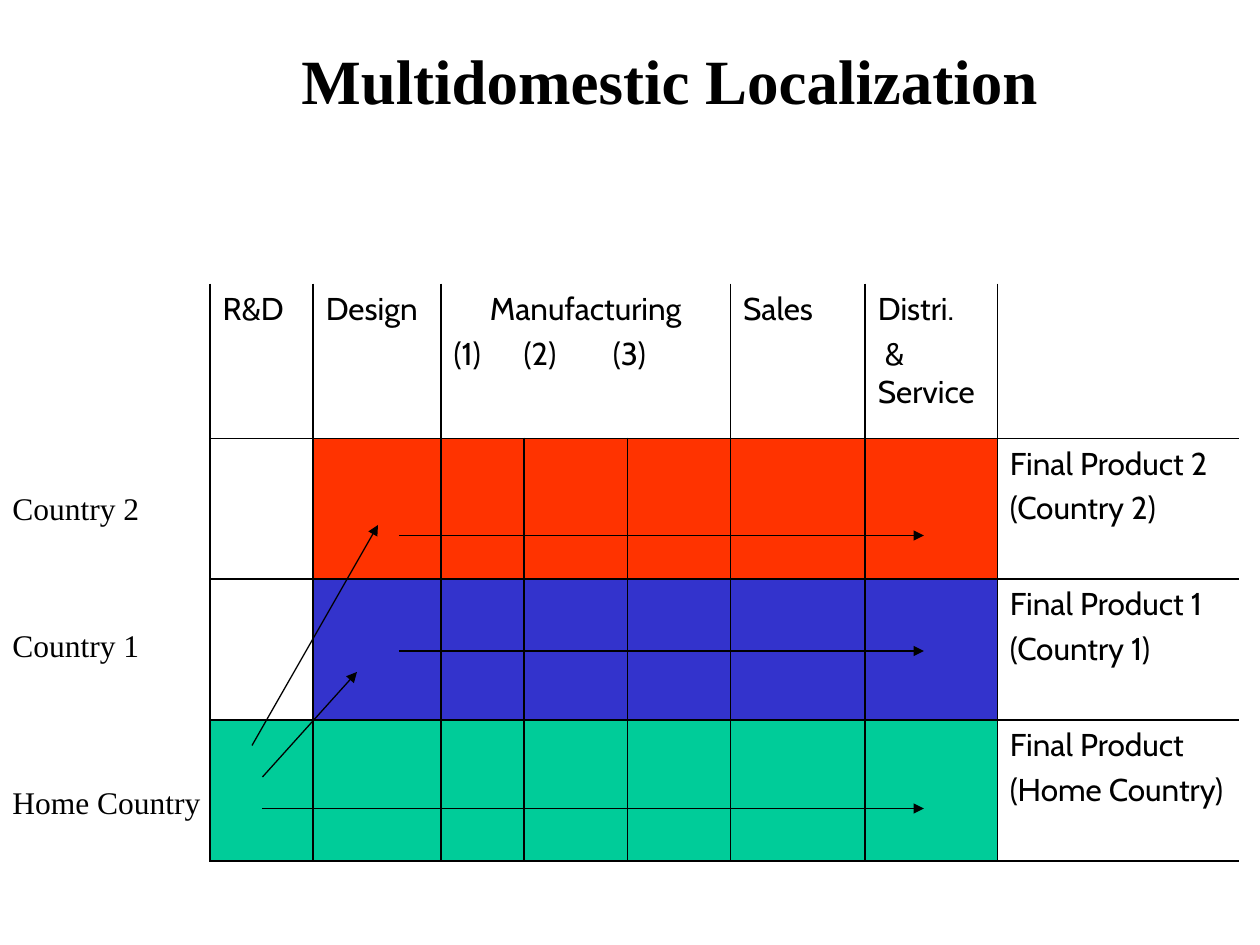
from lxml.etree import SubElement
from pptx import Presentation
from pptx.dml.color import RGBColor
from pptx.enum.shapes import MSO_CONNECTOR
from pptx.enum.text import MSO_ANCHOR, PP_ALIGN
from pptx.oxml import parse_xml
from pptx.oxml.ns import nsdecls, qn
from pptx.util import Pt

COLS = [59, 73, 47.5, 59, 59, 77, 75.5, 138]
ROWS = [88.5, 80.5, 80.5, 80.5]
HEADS = {0: ["R&D"], 1: ["Design"], 2: ["Manufacturing", "(1)\t(2)\t(3)"],
         5: ["Sales"], 6: ["Distri.", "& Service"]}
LANES = [("FF3300", 1, ["Final Product 2", "(Country 2)"]),
         ("3333CC", 1, ["Final Product 1", "(Country 1)"]),
         ("00CC99", 0, ["Final Product", "(Home Country)"])]
NAMES = [("Country 2", 0, 87, False), ("Country 1", 78, 87, False),
         ("Home Country", 168, 126, True)]
FLOWS = [(30, 282, 84, 222), (24, 264, 96, 138), (108, 144, 408, 144),
         (108, 210, 408, 210), (30, 300, 408, 300)]


def color(code):
    """Turn a hex string into a colour."""
    return RGBColor.from_string(code)


def write(frame, lines, font="Cabin", size=18, bold=False, align=PP_ALIGN.LEFT,
          gap=0, space=1):
    """Fill a text frame with one formatted paragraph per line."""
    for i, line in enumerate(lines):
        para = frame.paragraphs[0] if i == 0 else frame.add_paragraph()
        para.alignment = align
        para.line_spacing = space
        para.space_before = Pt(gap if i else 0)
        run = para.add_run()
        run.text = line
        run.font.name = font
        run.font.size = Pt(size)
        run.font.bold = bold
        run.font.color.rgb = color("000000")


def edge(cell, sides):
    """Draw the named sides of a cell and clear the others."""
    props = cell._tc.get_or_add_tcPr()
    for i, side in enumerate("LRTB"):
        fill = '<a:noFill/>'
        if side in sides:
            fill = '<a:solidFill><a:srgbClr val="000000"/></a:solidFill>'
        props.insert(i, parse_xml(
            f'<a:ln{side} {nsdecls("a")} w="{Pt(1)}">{fill}</a:ln{side}>'))


def head(slide, box, text):
    """Place the title in the box."""
    title = slide.shapes.title
    title.left, title.top, title.width, title.height = map(Pt, box)
    title.text_frame.vertical_anchor = MSO_ANCHOR.MIDDLE
    write(title.text_frame, [text], font="Times New Roman", size=36, bold=True,
          space=0.9)


def label(slide, box):
    """Place the country names down the box."""
    left, top = box
    for text, down, wide, wrap in NAMES:
        shape = slide.shapes.add_textbox(Pt(left), Pt(top + down), Pt(wide), Pt(29))
        shape.text_frame.word_wrap = wrap
        write(shape.text_frame, [text], font="Times New Roman")


def grid(slide, box):
    """Place the table of value chain steps by country."""
    left, top = box
    table = slide.shapes.add_table(len(ROWS), len(COLS), Pt(left), Pt(top),
                                   Pt(sum(COLS)), Pt(sum(ROWS))).table
    table.first_row = table.horz_banding = False
    for col, wide in zip(table.columns, COLS):
        col.width = Pt(wide)
    for row, high in zip(table.rows, ROWS):
        row.height = Pt(high)
    last = len(COLS) - 1
    for r in range(len(ROWS)):
        for c in range(len(COLS)):
            cell = table.cell(r, c)
            cell.fill.background()
            if r and LANES[r - 1][1] <= c < last:
                cell.fill.solid()
                cell.fill.fore_color.rgb = color(LANES[r - 1][0])
            edge(cell, "LB" + ("T" if r else "") + ("R" if c < last else ""))
    table.cell(0, 2).merge(table.cell(0, 4))
    for c, lines in HEADS.items():
        write(table.cell(0, c).text_frame, lines, gap=3.6)
    for r, lane in enumerate(LANES, 1):
        write(table.cell(r, last).text_frame, lane[2], gap=3.6)
    name, steps = table.cell(0, 2).text_frame.paragraphs
    name.alignment = PP_ALIGN.CENTER
    tabs = SubElement(steps._p.get_or_add_pPr(), qn("a:tabLst"))
    for stop in (40, 91):
        SubElement(tabs, qn("a:tab"), pos=str(Pt(stop)), algn="l")
    service = table.cell(0, 6).text_frame.paragraphs[1]
    service._p.get_or_add_pPr().set("indent", str(Pt(4)))


def flow(slide, box):
    """Draw the arrows over the table box."""
    left, top = box
    for x, y, across, down in FLOWS:
        line = slide.shapes.add_connector(
            MSO_CONNECTOR.STRAIGHT, Pt(left + x), Pt(top + y),
            Pt(left + across), Pt(top + down))
        line.line.color.rgb = color("000000")
        line.line.width = Pt(0.75)
        SubElement(line.line._get_or_add_ln(), qn("a:tailEnd"), type="triangle")
        SubElement(line._element.spPr, qn("a:effectLst"))


def main():
    """Build and save the slide."""
    deck = Presentation()
    deck.slide_width, deck.slide_height = Pt(720), Pt(540)
    slide = deck.slides.add_slide(deck.slide_layouts[5])
    head(slide, (165, 21, 451.5, 54), "Multidomestic Localization")
    label(slide, (0, 276))
    grid(slide, (120, 162))
    flow(slide, (120, 162))
    deck.save("out.pptx")


if __name__ == "__main__":
    main()
